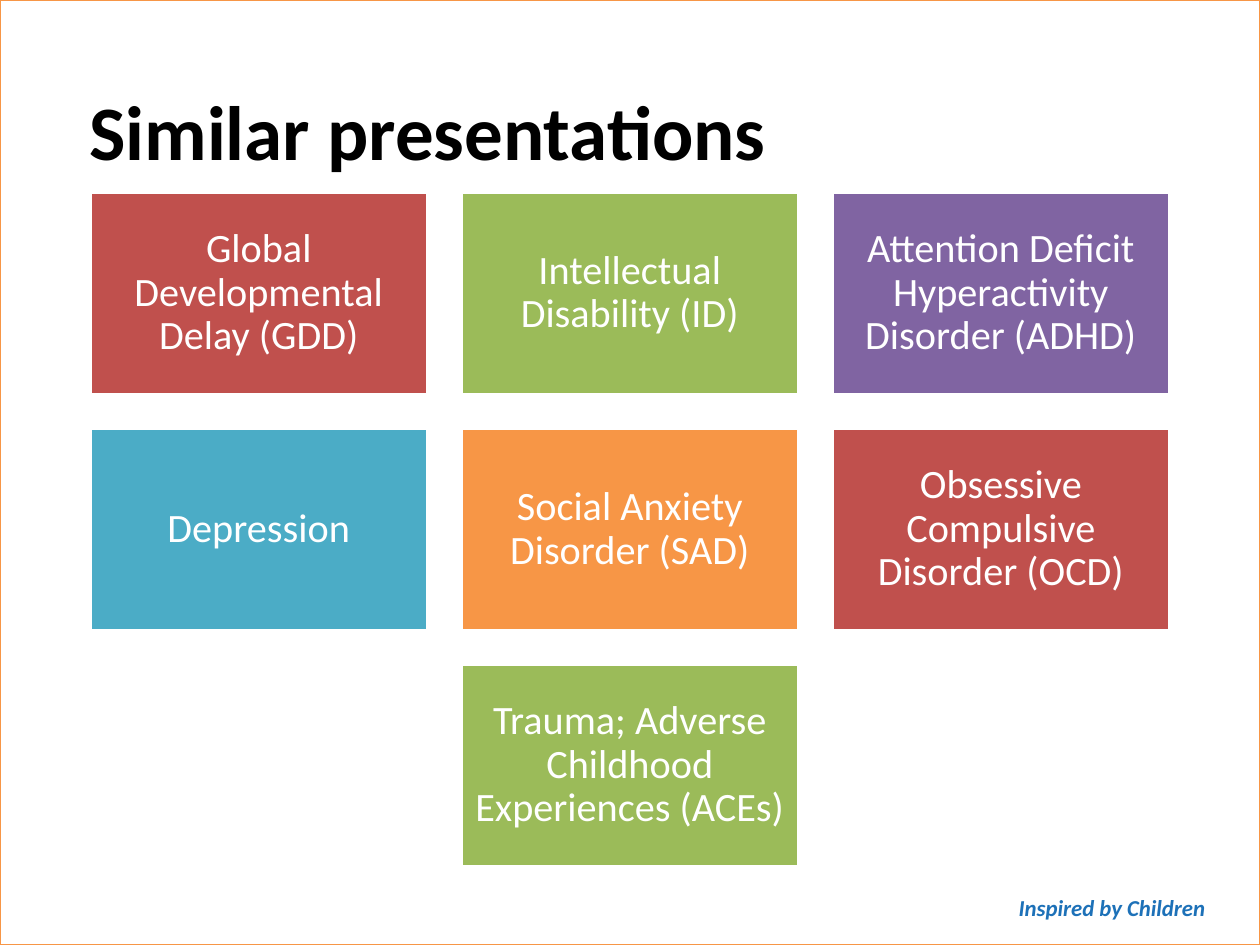
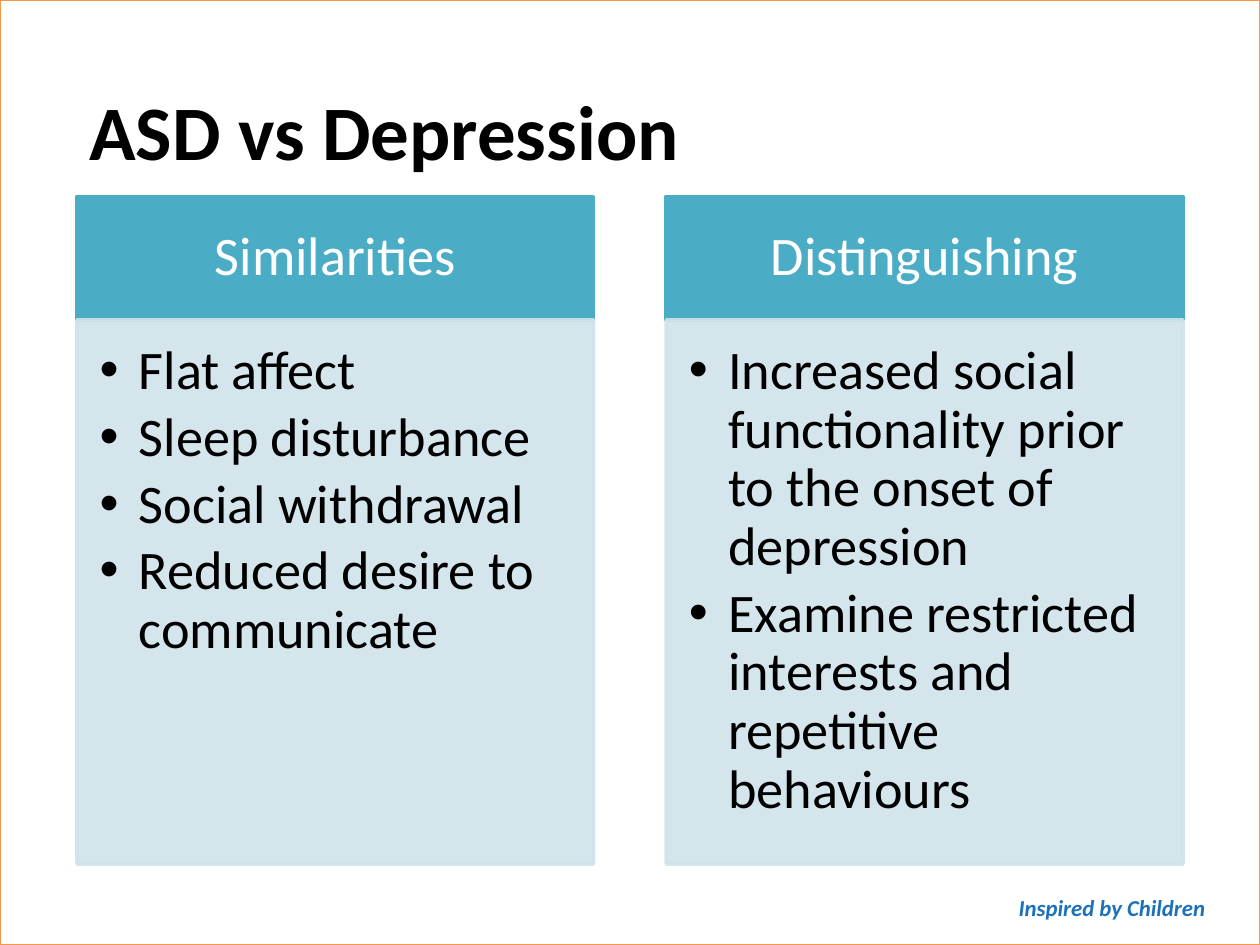
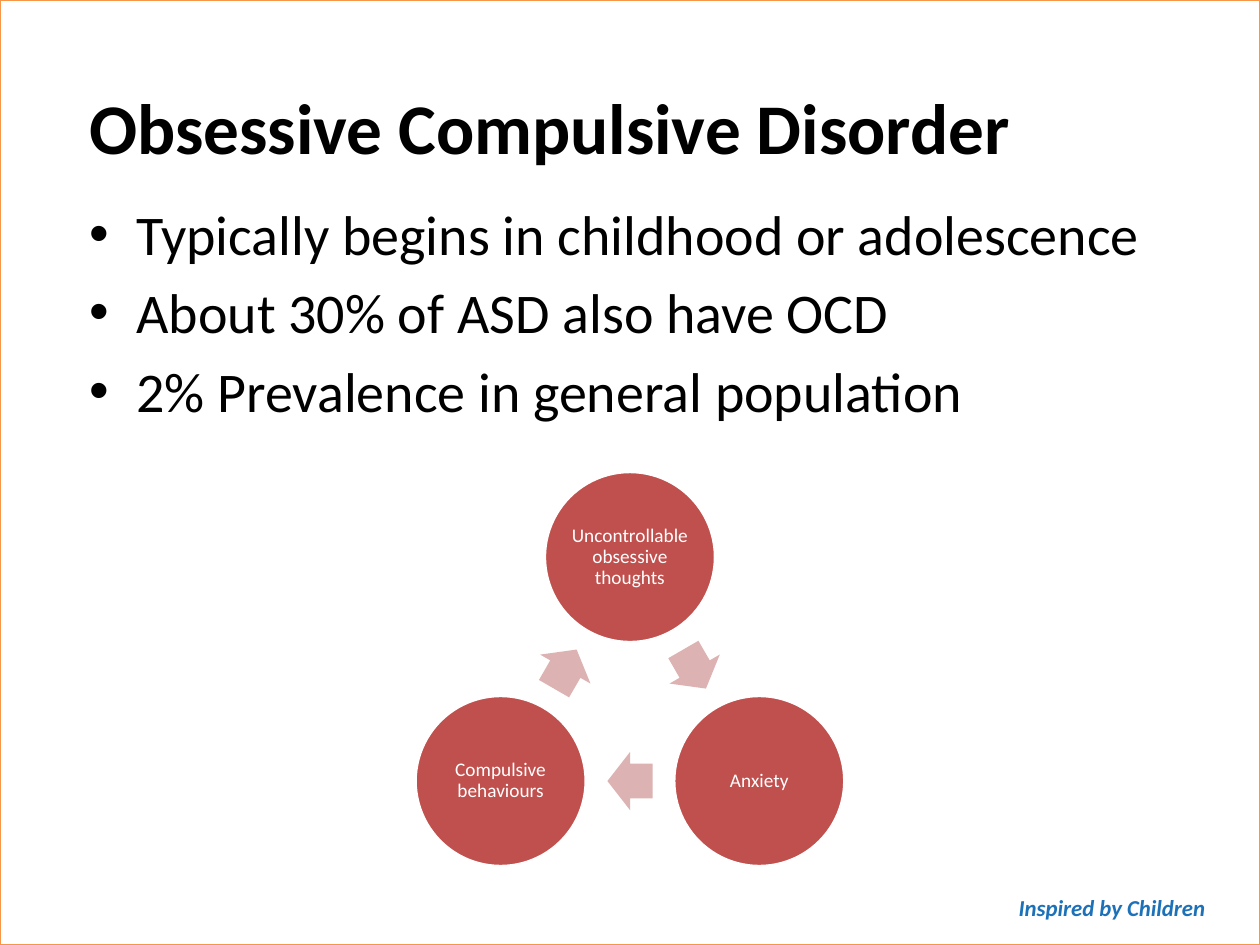
from math import cos, radians, sin

from pptx import Presentation
from pptx.dml.color import RGBColor
from pptx.enum.shapes import MSO_SHAPE
from pptx.enum.text import MSO_ANCHOR, PP_ALIGN
from pptx.oxml.ns import qn
from pptx.util import Cm, Pt
from lxml import etree

RECT, OVAL, ARROW = MSO_SHAPE.RECTANGLE, MSO_SHAPE.OVAL, MSO_SHAPE.RIGHT_ARROW
TOP, MIDDLE = MSO_ANCHOR.TOP, MSO_ANCHOR.MIDDLE
LEFT, CENTER, RIGHT = PP_ALIGN.LEFT, PP_ALIGN.CENTER, PP_ALIGN.RIGHT

color = RGBColor.from_string
WHITE, BLACK, BLUE = "FFFFFF", "000000", "1D71B8"
RED, GREEN, PURPLE, TEAL, ORANGE = "C0504D", "9BBB59", "8064A2", "4BACC6", "F79646"
PALE_TEAL, PALE_RED = "D0E3EA", "DCB3B2"

TITLE_FONT = {"size": Pt(44), "bold": True}
FOOTER_FONT = {"size": Pt(13), "bold": True, "italic": True}
INSETS = (0.25, 0.13, 0.25, 0.13)  # left, top, right, bottom


def add_block(slide, kind, box, fill, line=None, width=2, alpha=None):
    block = slide.shapes.add_shape(kind, *[Cm(length) for length in box])
    block.shadow.inherit = False
    block.fill.solid()
    block.fill.fore_color.rgb = color(fill)
    if line:
        block.line.color.rgb = color(line)
        block.line.width = Pt(width)
    else:
        block.line.fill.background()
    if alpha:
        for tone in block._element.spPr.iter(qn("a:srgbClr")):
            etree.SubElement(tone, qn("a:alpha"), val=str(alpha * 1000))
    return block


def write(shape, lines, ink, font, anchor=TOP, insets=INSETS, indent=None, gap=0, **layout):
    frame = shape.text_frame
    frame.word_wrap = True
    frame.vertical_anchor = anchor
    for side, inset in zip(("left", "top", "right", "bottom"), insets):
        setattr(frame, f"margin_{side}", Cm(inset))
    for number, line in enumerate(lines):
        paragraph = frame.add_paragraph() if number else frame.paragraphs[0]
        if indent:
            properties = paragraph._p.get_or_add_pPr()
            properties.set("marL", str(Cm(indent)))
            properties.set("indent", str(-Cm(indent)))
            etree.SubElement(properties, qn("a:buFont"), typeface="Arial")
            etree.SubElement(properties, qn("a:buChar"), char="•")
        for name, value in layout.items():
            setattr(paragraph, name, value)
        paragraph.space_before = Pt(gap if number else 0)
        run = paragraph.add_run()
        run.text = line
        for name, value in {"name": "Calibri", **font}.items():
            setattr(run.font, name, value)
        run.font.color.rgb = color(ink)


deck = Presentation()
deck.slide_width, deck.slide_height = Cm(25.4), Cm(19.05)

# Frame, footer and title of every slide
titles = [
    ("Similar presentations", {}),
    ("ASD vs Depression", {}),
    ("Obsessive Compulsive Disorder", {"size": Pt(40.7)}),
]
slides = []
for title, changes in titles:
    slide = deck.slides.add_slide(deck.slide_layouts[6])
    add_block(slide, RECT, (0, 0, 25.4, 19.05), WHITE, ORANGE, 0.75)
    footer = slide.shapes.add_textbox(Cm(19.89), Cm(17.88), Cm(4.65), Cm(0.81))
    write(footer, ["Inspired by Children"], BLUE, FOOTER_FONT, alignment=RIGHT)
    heading = slide.shapes.add_textbox(Cm(1.55), Cm(1.55), Cm(20.4), Cm(2.34))
    write(heading, [title], BLACK, {**TITLE_FONT, **changes}, alignment=LEFT)
    slides.append(slide)
similar, depression, compulsive = slides

# Slide 1: grid of conditions, the last one centred
conditions = [
    ("Global Developmental Delay (GDD)", RED, 0, 0),
    ("Intellectual Disability (ID)", GREEN, 1, 0),
    ("Attention Deficit Hyperactivity Disorder (ADHD)", PURPLE, 2, 0),
    ("Depression", TEAL, 0, 1),
    ("Social Anxiety Disorder (SAD)", ORANGE, 1, 1),
    ("Obsessive Compulsive Disorder (OCD)", RED, 2, 1),
    ("Trauma; Adverse Childhood Experiences (ACEs)", GREEN, 1, 2),
]
for condition, fill, column, row in conditions:
    box = (1.82 + 7.48 * column, 3.87 + 4.76 * row, 6.8, 4.08)
    tile = add_block(similar, RECT, box, fill, WHITE)
    write(tile, [condition], WHITE, {"size": Pt(23)}, MIDDLE, (0.23,) * 4,
          alignment=CENTER, line_spacing=0.9)

# Slide 2: two headed lists
comparison = {
    "Similarities": [
        "Flat affect",
        "Sleep disturbance",
        "Social withdrawal",
        "Reduced desire to communicate",
    ],
    "Distinguishing": [
        "Increased social functionality prior to the onset of depression",
        "Examine restricted interests and repetitive behaviours",
    ],
}
for column, (header, signs) in enumerate(comparison.items()):
    left = 1.55 + 11.88 * column
    band = add_block(depression, RECT, (left, 3.96, 10.42, 2.49), TEAL, TEAL)
    write(band, [header], WHITE, {"size": Pt(31)}, MIDDLE, (0.61, 0.36, 0.61, 0.36),
          alignment=CENTER, line_spacing=0.9)
    panel = add_block(depression, RECT, (left, 6.45, 10.42, 10.97), PALE_TEAL, PALE_TEAL, alpha=90)
    write(panel, signs, BLACK, {"size": Pt(31)}, TOP, (0.46, 0.46, 0.61, 0.69),
          indent=0.79, gap=4.65, alignment=LEFT, line_spacing=0.9)

# Slide 3: facts
facts = compulsive.shapes.add_textbox(Cm(1.55), Cm(3.89), Cm(22.3), Cm(13.61))
write(facts, [
    "Typically begins in childhood or adolescence",
    "About 30% of ASD also have OCD",
    "2% Prevalence in general population",
], BLACK, {"size": Pt(32)}, indent=0.95, gap=6.4, alignment=LEFT)

# Slide 3: cycle, each arrow halfway between two stages
stages = ["Uncontrollable obsessive thoughts", "Anxiety", "Compulsive behaviours"]
center_x, center_y, radius = 12.7, 14.24, 3.01
diameter, arrow_length, arrow_width = 3.45, 0.91, 1.17
for number, stage in enumerate(stages):
    angle = radians(120 * number - 90)
    x, y = center_x + radius * cos(angle), center_y + radius * sin(angle)
    circle = add_block(compulsive, OVAL, (x - diameter / 2, y - diameter / 2, diameter, diameter),
                       RED, WHITE)
    write(circle, [stage], WHITE, {"size": Pt(11)}, MIDDLE, (0.04,) * 4,
          alignment=CENTER, line_spacing=0.9)

    halfway = angle + radians(60)
    x, y = center_x + radius / 2 * cos(halfway), center_y + radius / 2 * sin(halfway)
    arrow = add_block(compulsive, ARROW,
                      (x - arrow_length / 2, y - arrow_width / 2, arrow_length, arrow_width), PALE_RED)
    arrow.adjustments[0], arrow.adjustments[1] = 0.6, 0.5
    arrow.rotation = 60 + 120 * number

deck.save("out.pptx")
